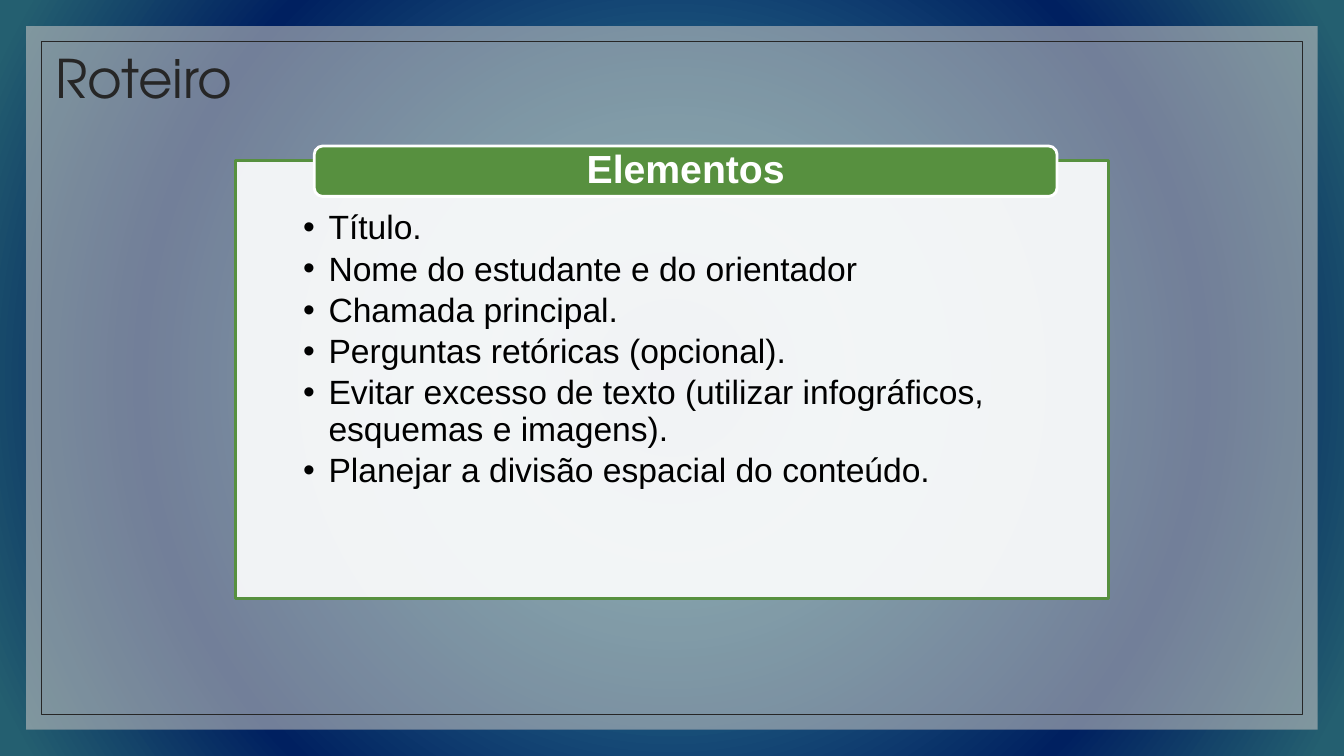
from dataclasses import dataclass
from typing import Optional

from lxml import etree
from pptx import Presentation
from pptx import util as u
from pptx.dml import color
from pptx.enum import shapes, text
from pptx.oxml import ns

COLORS = {
    "navy": "002060", "teal": "2E798E", "deep_teal": "245F70",
    "gray": "BFBFBF", "ink": "262626", "green": "57903F",
    "white": "FFFFFF", "black": "000000",
}
WIDTH, HEIGHT = 33.87, 19.05
BACKGROUND_STOPS = [(0, "navy"), (23, "teal"), (69, "navy"), (97, "deep_teal"), (100, "deep_teal")]
ELEMENTS = [
    "Título.",
    "Nome do estudante e do orientador",
    "Chamada principal.",
    "Perguntas retóricas (opcional).",
    "Evitar excesso de texto (utilizar infográficos, esquemas e imagens).",
    "Planejar a divisão espacial do conteúdo.",
]


@dataclass
class Box:
    left: float
    top: float
    width: float
    height: float
    fill: Optional[str] = None
    opacity: int = 100
    line: Optional[str] = None
    line_width: float = 2
    kind: shapes.MSO_SHAPE = shapes.MSO_SHAPE.RECTANGLE


def border_box(margin: float, **style) -> Box:
    return Box(margin, margin, WIDTH - 2 * margin, HEIGHT - 2 * margin, **style)


OUTER_FRAME = border_box(0.66, fill="gray", opacity=60)
INNER_FRAME = border_box(1.04, line="ink", line_width=0.75)
TITLE = Box(1.14, 0.15, 27.94, 3.81)
PANEL = Box(5.94, 4.04, 22, 11.05, fill="white", opacity=90, line="green")
LABEL = Box(7.92, 3.68, 18.72, 1.27, fill="green", line="white",
            kind=shapes.MSO_SHAPE.ROUNDED_RECTANGLE)


def rgb(name: str) -> color.RGBColor:
    return color.RGBColor.from_string(COLORS[name])


def add_child(parent, tag: str, **attributes):
    return etree.SubElement(parent, ns.qn(tag), attributes)


def paint_background(slide) -> None:
    slide.background.fill.solid()
    solid = next(slide.element.iter(ns.qn("a:solidFill")))
    gradient = etree.Element(ns.qn("a:gradFill"), rotWithShape="1")
    stops = add_child(gradient, "a:gsLst")
    for position, name in BACKGROUND_STOPS:
        stop = add_child(stops, "a:gs", pos=str(position * 1000))
        add_child(stop, "a:srgbClr", val=COLORS[name])
    circle = add_child(gradient, "a:path", path="circle")
    add_child(circle, "a:fillToRect", l="50000", t="50000", r="50000", b="50000")
    solid.getparent().replace(solid, gradient)


def draw_box(slide, box: Box):
    shape = slide.shapes.add_shape(
        box.kind, u.Cm(box.left), u.Cm(box.top), u.Cm(box.width), u.Cm(box.height))
    shape.shadow.inherit = False
    if box.fill:
        shape.fill.solid()
        shape.fill.fore_color.rgb = rgb(box.fill)
        if box.opacity < 100:
            solid = shape.element.spPr.find(ns.qn("a:solidFill"))
            add_child(solid[0], "a:alpha", val=str(box.opacity * 1000))
    else:
        shape.fill.background()
    if box.line:
        shape.line.color.rgb = rgb(box.line)
        shape.line.width = u.Pt(box.line_width)
    else:
        shape.line.fill.background()
    return shape


def write(shape, lines: list[str], *, size: float, ink: str, font: str = "Arial",
          bold: bool = False, align=text.PP_ALIGN.LEFT, anchor=text.MSO_ANCHOR.MIDDLE,
          insets: tuple = (0.25, 0.13, 0.25, 0.13), after: float = 0,
          bullet: bool = False) -> None:
    frame = shape.text_frame
    frame.word_wrap = True
    frame.vertical_anchor = anchor
    frame.margin_left, frame.margin_top, frame.margin_right, frame.margin_bottom = map(u.Cm, insets)
    frame.text = "\n".join(lines)
    for paragraph in frame.paragraphs:
        paragraph.alignment = align
        paragraph.line_spacing = 0.9
        paragraph.space_after = u.Pt(after)
        for run in paragraph.runs:
            run.font.name = font
            run.font.size = u.Pt(size)
            run.font.bold = bold
            run.font.color.rgb = rgb(ink)
        if bullet:
            properties = paragraph._p.get_or_add_pPr()
            indent = u.Cm(0.64)
            properties.set("marL", str(indent))
            properties.set("indent", str(-indent))
            add_child(add_child(properties, "a:buClr"), "a:srgbClr", val=COLORS[ink])
            add_child(properties, "a:buFont", typeface=font)
            add_child(properties, "a:buChar", char="•")


def main() -> None:
    presentation = Presentation()
    presentation.slide_width = u.Cm(WIDTH)
    presentation.slide_height = u.Cm(HEIGHT)
    slide = presentation.slides.add_slide(presentation.slide_layouts[6])
    paint_background(slide)
    draw_box(slide, OUTER_FRAME)
    draw_box(slide, INNER_FRAME)

    title = slide.shapes.add_textbox(
        u.Cm(TITLE.left), u.Cm(TITLE.top), u.Cm(TITLE.width), u.Cm(TITLE.height))
    write(title, ["Roteiro"], size=38, ink="ink", font="TeX Gyre Adventor")

    panel = draw_box(slide, PANEL)
    write(panel, ELEMENTS, size=24, ink="black", anchor=text.MSO_ANCHOR.TOP,
          insets=(1.7, 1.27, 1.7, 0.48), after=3.6, bullet=True)

    label = draw_box(slide, LABEL)
    write(label, ["Elementos"], size=28, ink="white", bold=True,
          align=text.PP_ALIGN.CENTER, insets=(0.6, 0, 0.6, 0))

    presentation.save("out.pptx")


if __name__ == "__main__":
    main()
